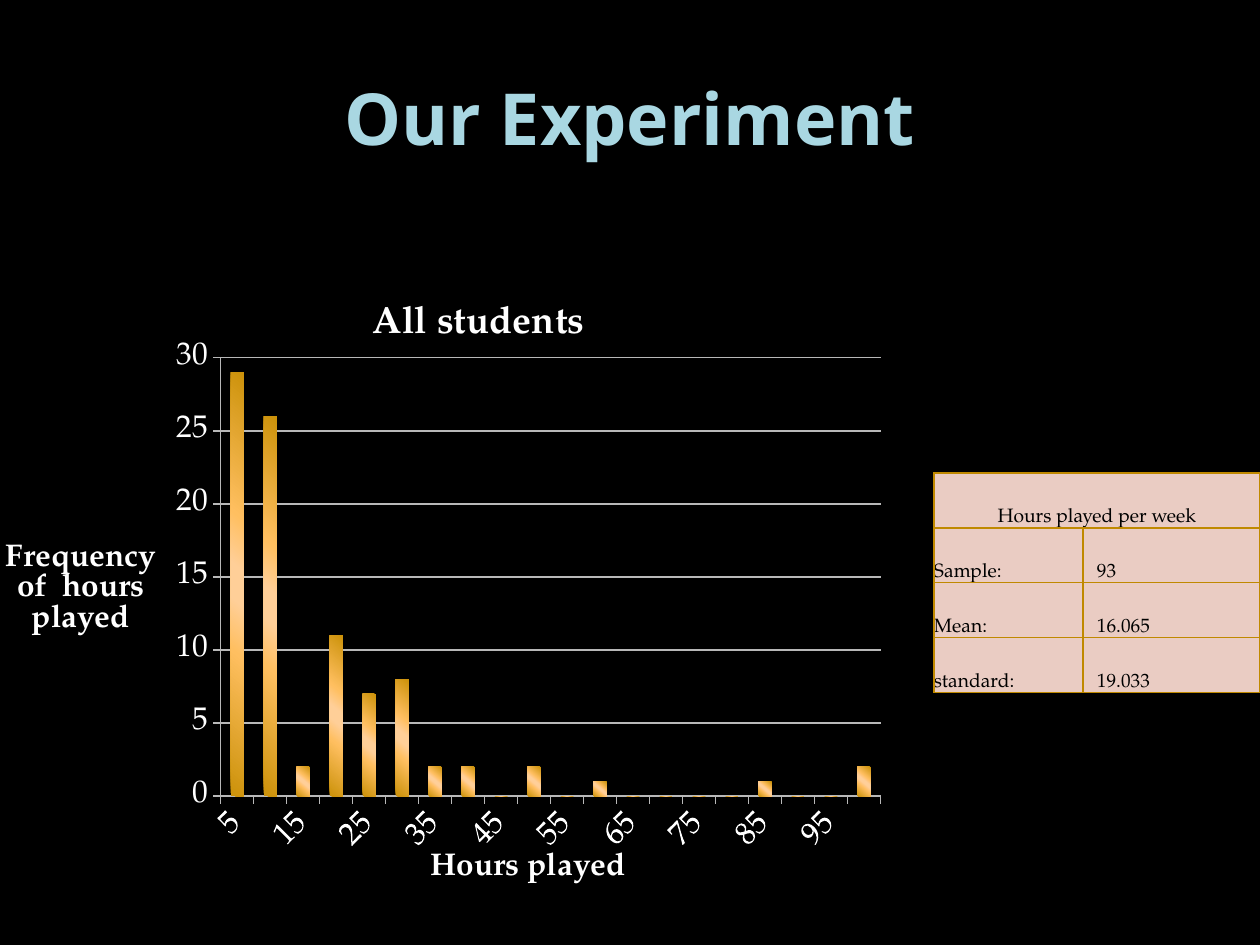
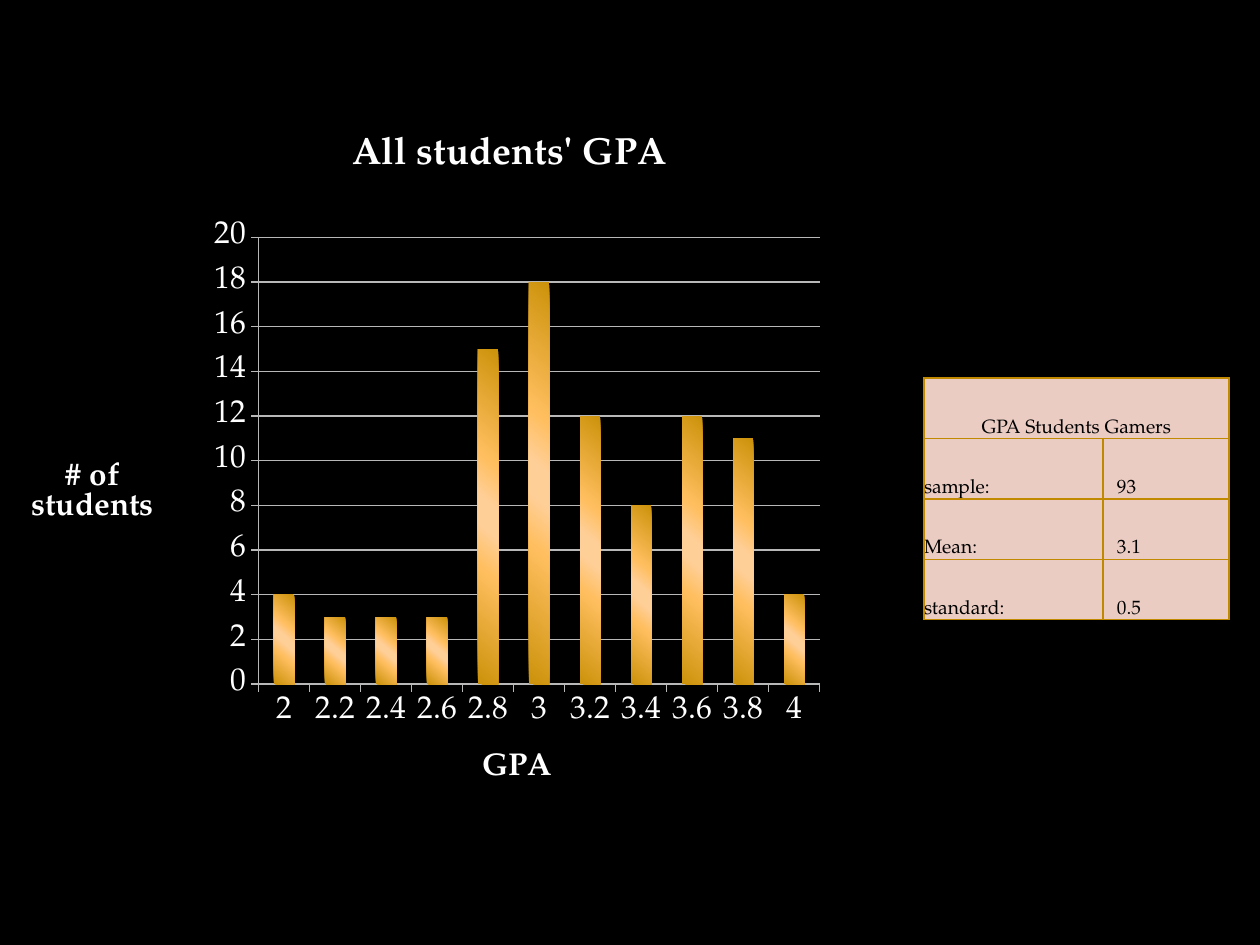
from lxml.etree import SubElement
from pptx import Presentation
from pptx.chart.data import CategoryChartData
from pptx.dml.color import RGBColor
from pptx.enum.chart import XL_CHART_TYPE, XL_TICK_MARK
from pptx.enum.text import MSO_ANCHOR, PP_ALIGN
from pptx.oxml import parse_xml
from pptx.oxml.ns import nsdecls, qn
from pptx.util import Pt

PX = 914400 / 126
COLORS = {
    "background": "000000",
    "title": "A9D7E2",
    "chart_text": "FFFFFF",
    "grid": "B8B8B8",
    "cell": "EACCC3",
    "cell_text": "000000",
    "border": "C08900",
    "bar_edge": "CC920A",
    "bar_inner": "FFBF60",
    "bar_middle": "FFCF98",
}
TITLE_FONT = "Noto Sans"
BODY_FONT = "TeX Gyre Pagella"
TITLE_ONLY, BLANK = 5, 6


def px(length):
    return round(length * PX)


def color(name):
    return RGBColor.from_string(COLORS[name])


def format_font(font, name, size, color_name, bold=False):
    font.name, font.size, font.bold = name, Pt(size), bold
    font.color.rgb = color(color_name)


def add_title(slide, text, box):
    title = slide.shapes.title
    title.left, title.top, title.width, title.height = map(px, box)
    title.text_frame.text = text
    title.text_frame.vertical_anchor = MSO_ANCHOR.MIDDLE
    paragraph = title.text_frame.paragraphs[0]
    paragraph.alignment = PP_ALIGN.CENTER
    format_font(paragraph.runs[0].font, TITLE_FONT, 41, "title", True)


# Statistics table
def add_border(cell):
    properties = cell._tc.get_or_add_tcPr()
    for position, side in enumerate(("lnL", "lnR", "lnT", "lnB")):
        properties.insert(position, parse_xml(
            f'<a:{side} {nsdecls("a")} w="9525"><a:solidFill>'
            f'<a:srgbClr val="{COLORS["border"]}"/></a:solidFill></a:{side}>'))


def add_statistics(slide, heading, rows, box, label_width):
    table = slide.shapes.add_table(len(rows) + 1, 2, *map(px, box)).table
    table.first_row = table.horz_banding = False
    table.columns[0].width = px(label_width)
    table.columns[1].width = px(box[2] - label_width)
    for row in table.rows:
        row.height = px(box[3] / len(table.rows))
    table.cell(0, 0).merge(table.cell(0, 1))
    for row_index, texts in enumerate([(heading, ""), *rows]):
        for column_index, text in enumerate(texts):
            cell = table.cell(row_index, column_index)
            cell.margin_left = px(14 * column_index)
            cell.margin_right = cell.margin_top = cell.margin_bottom = 0
            cell.vertical_anchor = MSO_ANCHOR.BOTTOM
            cell.fill.solid()
            cell.fill.fore_color.rgb = color("cell")
            add_border(cell)
            paragraph = cell.text_frame.paragraphs[0]
            paragraph.text = text
            paragraph.alignment = PP_ALIGN.LEFT if row_index else PP_ALIGN.CENTER
            for run in paragraph.runs:
                format_font(run.font, BODY_FONT, 11, "cell_text")


# Column chart
def set_layout(layout, **values):
    manual = SubElement(layout, qn("c:manualLayout"))
    for name, value in values.items():
        SubElement(manual, qn(f"c:{name}")).set("val", str(value))


def place_chart_title(title, text, size, position):
    title.text_frame.text = text
    format_font(title.text_frame.paragraphs[0].runs[0].font,
                BODY_FONT, size, "chart_text", True)
    title.text_frame._txBody.bodyPr.set("rot", "0")
    element = title._element
    layout = element.find(qn("c:layout"))
    if layout is None:
        layout = parse_xml(f'<c:layout {nsdecls("c")}/>')
        element.find(qn("c:tx")).addnext(layout)
    set_layout(layout, xMode="edge", yMode="edge", x=position[0], y=position[1])


def place_plot(chart, plot):
    plot_area = chart._chartSpace.chart.plotArea
    layout = plot_area.find(qn("c:layout"))
    if layout is None:
        layout = parse_xml(f'<c:layout {nsdecls("c")}/>')
        plot_area.insert(0, layout)
    x, y, width, height = plot
    set_layout(layout, layoutTarget="inner", xMode="edge", yMode="edge",
               x=x, y=y, w=width, h=height)


def fill_bars(series):
    names = ("bar_edge", "bar_inner", "bar_middle", "bar_middle", "bar_inner", "bar_edge")
    places = (0, 34, 46, 54, 66, 100)
    stops = "".join(
        f'<a:gs pos="{place * 1000}"><a:srgbClr val="{COLORS[name]}"/></a:gs>'
        for place, name in zip(places, names))
    series.format.fill.background()
    properties = series._element.spPr
    properties.replace(properties.find(qn("a:noFill")), parse_xml(
        f'<a:gradFill {nsdecls("a")}><a:gsLst>{stops}</a:gsLst>'
        '<a:lin ang="7800000" scaled="0"/></a:gradFill>'))


def add_column_chart(slide, box, categories, values, maximum, step, plot, titles):
    data = CategoryChartData()
    data.categories = categories
    data.add_series("Series 1", values)
    chart = slide.shapes.add_chart(
        XL_CHART_TYPE.COLUMN_CLUSTERED, *map(px, box), data).chart
    chart.has_legend = False
    format_font(chart.font, BODY_FONT, 18, "chart_text")
    bars = chart.plots[0]
    bars.gap_width, bars.vary_by_categories = 150, False
    fill_bars(bars.series[0])
    place_plot(chart, plot)

    value_axis, category_axis = chart.value_axis, chart.category_axis
    value_axis.minimum_scale, value_axis.maximum_scale = 0, maximum
    value_axis.major_unit = step
    value_axis.has_major_gridlines = True
    for line in (value_axis.major_gridlines.format.line,
                 value_axis.format.line, category_axis.format.line):
        line.color.rgb = color("grid")
        line.width = Pt(0.75)
    for axis in (value_axis, category_axis):
        axis.major_tick_mark = XL_TICK_MARK.OUTSIDE
        format_font(axis.tick_labels.font, BODY_FONT, 18, "chart_text")

    owners = (chart.chart_title, category_axis.axis_title, value_axis.axis_title)
    for owner, size, (text, position) in zip(owners, (21.6, 18, 18), titles):
        place_chart_title(owner, text, size, position)
    return chart


def slant_labels(axis, skip):
    element = axis._element
    element.find(qn("c:txPr")).find(qn("a:bodyPr")).set("rot", "-2700000")
    element.find(qn("c:noMultiLvlLbl")).addprevious(
        parse_xml(f'<c:tickLblSkip {nsdecls("c")} val="{skip}"/>'))


# Slides
def build_hours_slide(presentation):
    slide = presentation.slides.add_slide(presentation.slide_layouts[TITLE_ONLY])
    add_title(slide, "Our Experiment", (63, 38, 1134, 157))
    add_statistics(
        slide, "Hours played per week",
        [("Sample:", "93"), ("Mean:", "16.065"), ("standard:", "19.033")],
        (934, 473, 326, 220), 149)
    chart = add_column_chart(
        slide, (0, 284, 924, 609),
        [str(hours) for hours in range(5, 101, 5)],
        (29, 26, 2, 11, 7, 8, 2, 2, 0, 2, 0, 1, 0, 0, 0, 0, 1, 0, 0, 2),
        30, 5, (0.239, 0.122, 0.714, 0.724),
        [("All students", (0.396, 0.018)),
         ("Hours played", (0.46, 0.925)),
         ("Frequency of  hours played", (0, 0.415))])
    slant_labels(chart.category_axis, 2)


def build_gpa_slide(presentation):
    slide = presentation.slides.add_slide(presentation.slide_layouts[BLANK])
    add_statistics(
        slide, "GPA Students Gamers",
        [("sample:", "93"), ("Mean:", "3.1"), ("standard:", "0.5")],
        (924, 378, 305, 242), 179)
    add_column_chart(
        slide, (0, 94, 829, 788),
        [f"{tenths / 10:g}" for tenths in range(20, 41, 2)],
        (4, 3, 3, 3, 15, 18, 12, 8, 12, 11, 4),
        20, 2, (0.312, 0.182, 0.677, 0.567),
        [("All students' GPA", (0.417, 0.04)),
         ("GPA", (0.575, 0.825)),
         ("# of students", (0.031, 0.456))])


def main():
    presentation = Presentation()
    presentation.slide_width, presentation.slide_height = px(1260), px(945)
    background = presentation.slide_master.background.fill
    background.solid()
    background.fore_color.rgb = color("background")
    build_hours_slide(presentation)
    build_gpa_slide(presentation)
    presentation.save("out.pptx")


if __name__ == "__main__":
    main()
